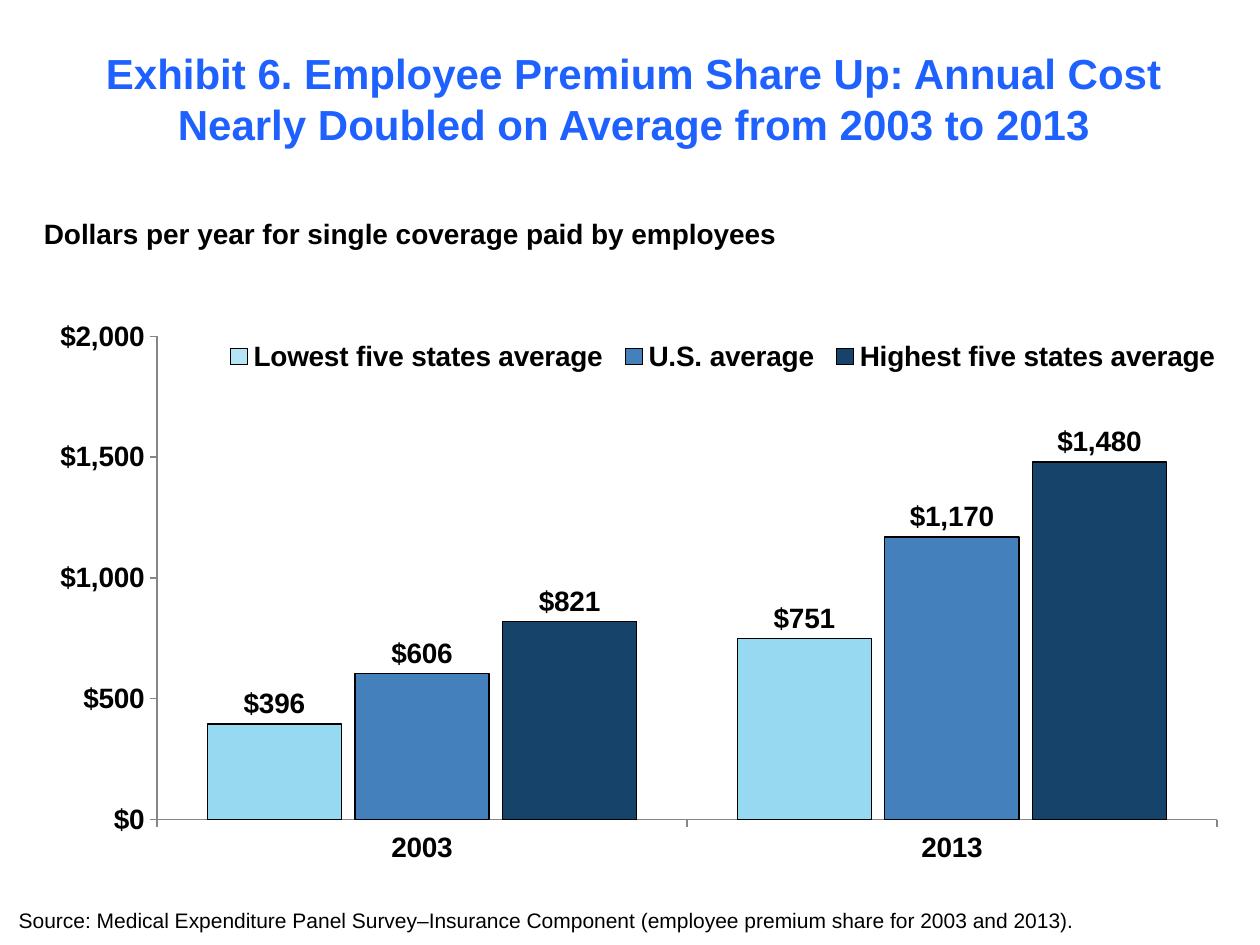
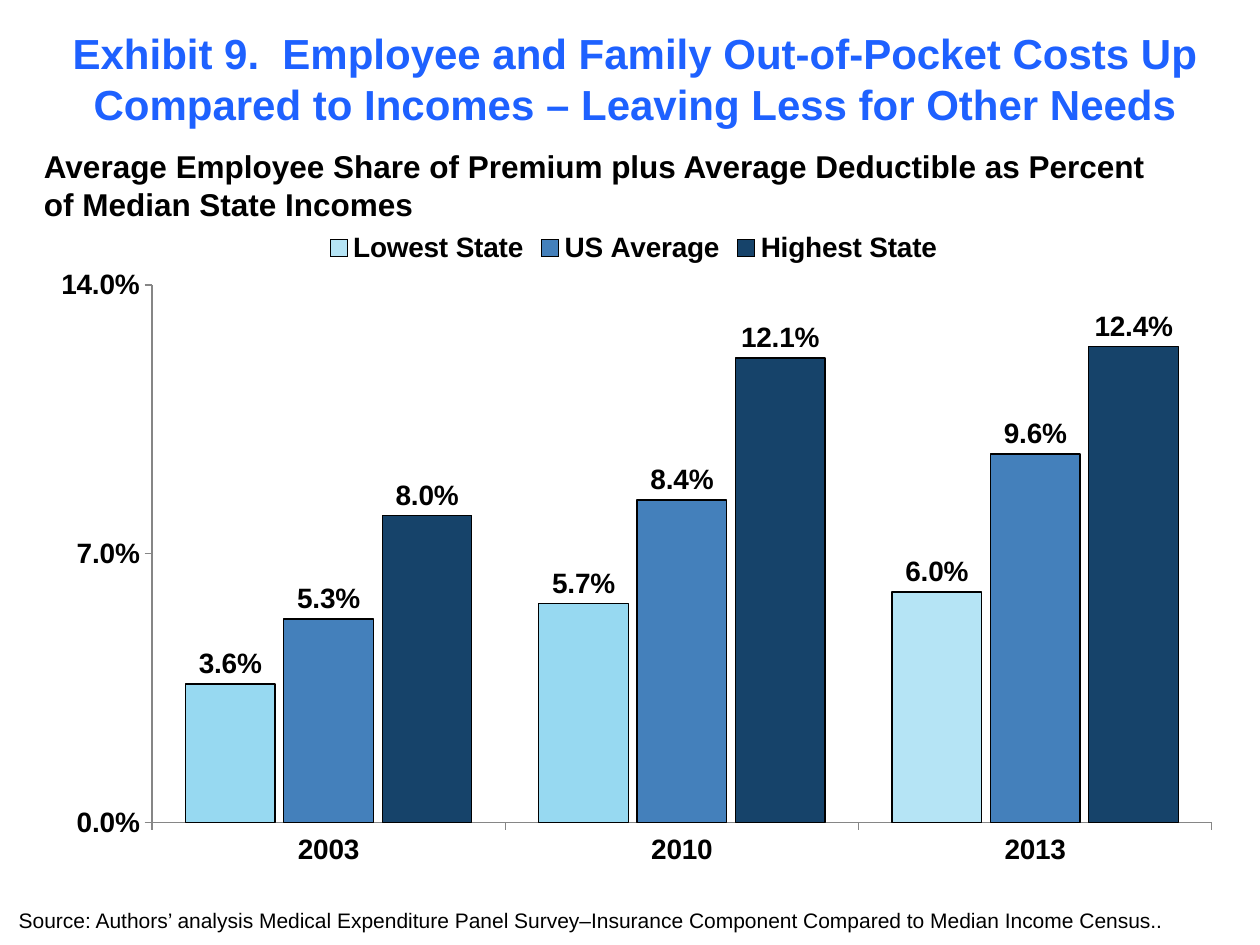
"""Build two exhibit slides on the cost of employee health coverage."""
import pptx
import pptx.chart.data
import pptx.dml.color
import pptx.enum.chart
import pptx.enum.text
import pptx.oxml
import pptx.oxml.ns
import pptx.util

Inches = pptx.util.Inches
Pt = pptx.util.Pt
RGBColor = pptx.dml.color.RGBColor

FONT = "Arial"
BLUE = RGBColor(0x1E, 0x61, 0xFF)
BLACK = RGBColor(0, 0, 0)
GREY = RGBColor(0x86, 0x86, 0x86)
PALE = RGBColor(0xB5, 0xE4, 0xF5)
SKY = RGBColor(0x97, 0xD9, 0xF1)
FILLS = (PALE, RGBColor(0x44, 0x80, 0xBB), RGBColor(0x16, 0x43, 0x6A))


def set_font(font, size, color=BLACK, bold=False):
    font.name = FONT
    font.size = Pt(size)
    font.color.rgb = color
    font.bold = bold


def make_layout(x, y, w, h, inner=False):
    ns = pptx.oxml.ns.nsdecls("c")
    target = '<c:layoutTarget val="inner"/>' if inner else ""
    sizes = "".join(f'<c:{key} val="{val}"/>' for key, val in zip("xywh", (x, y, w, h)))
    return pptx.oxml.parse_xml(
        f'<c:layout {ns}><c:manualLayout>{target}<c:xMode val="edge"/>'
        f'<c:yMode val="edge"/>{sizes}</c:manualLayout></c:layout>')


def drop_layout(part):
    for old in part.findall(pptx.oxml.ns.qn("c:layout")):
        part.remove(old)


class Deck:
    def __init__(self):
        self.prs = pptx.Presentation()
        self.prs.slide_width = Inches(10)
        self.prs.slide_height = Inches(7.5)
        self.slide = None

    def start(self, title, left, top, width):
        self.slide = self.prs.slides.add_slide(self.prs.slide_layouts[5])
        shape = self.slide.shapes.title
        shape.left, shape.top = Inches(left), Inches(top)
        shape.width, shape.height = Inches(width), Inches(0.9)
        frame = shape.text_frame
        frame.text = title
        frame.auto_size = pptx.enum.text.MSO_AUTO_SIZE.NONE
        frame.vertical_anchor = pptx.enum.text.MSO_ANCHOR.TOP
        frame.paragraphs[0].alignment = pptx.enum.text.PP_ALIGN.CENTER
        set_font(frame.paragraphs[0].font, 24, BLUE, True)

    def text(self, words, left, top, width, height, size, bold=False):
        box = self.slide.shapes.add_textbox(
            Inches(left), Inches(top), Inches(width), Inches(height))
        box.text_frame.word_wrap = True
        box.text_frame.text = words
        set_font(box.text_frame.paragraphs[0].font, size, bold=bold)

    def source(self, words):
        self.text("Source: " + words, 0.05, 7.15, 9.78, 0.3, 12)

    def chart(self, left, top, years, rows, form, peak, step, plot, key=None):
        data = pptx.chart.data.CategoryChartData(number_format=form)
        data.categories = years
        for name, vals in rows:
            data.add_series(name, vals)
        chart = self.slide.shapes.add_chart(
            pptx.enum.chart.XL_CHART_TYPE.COLUMN_CLUSTERED,
            Inches(left), Inches(top), Inches(9.56), Inches(5.33), data).chart
        chart.has_title = False
        set_font(chart.font, 16, bold=True)
        self.axes(chart, form, peak, step)
        self.bars(chart.plots[0], form)
        area = chart.element.chart.plotArea
        drop_layout(area)
        area.insert(0, make_layout(*plot, inner=True))
        self.legend(chart, key)

    def axes(self, chart, form, peak, step):
        for axis in (chart.category_axis, chart.value_axis):
            axis.has_major_gridlines = False
            axis.major_tick_mark = pptx.enum.chart.XL_TICK_MARK.OUTSIDE
            axis.format.line.color.rgb = GREY
            axis.format.line.width = Pt(0.75)
            set_font(axis.tick_labels.font, 16, bold=True)
        axis = chart.value_axis
        axis.minimum_scale = 0
        axis.maximum_scale = peak
        axis.major_unit = step
        axis.tick_labels.number_format = form
        axis.tick_labels.number_format_is_linked = False

    def bars(self, plot, form):
        plot.gap_width = 75
        plot.overlap = -10
        plot.vary_by_categories = False
        for bar, fill in zip(plot.series, FILLS):
            self.paint(bar.format, fill)
            bar.invert_if_negative = False
            tags = bar.data_labels
            tags.show_value = True
            tags.position = pptx.enum.chart.XL_LABEL_POSITION.OUTSIDE_END
            tags.number_format = form
            tags.number_format_is_linked = False
            set_font(tags.font, 16, bold=True)
        for spot in range(2):
            self.paint(plot.series[0].points[spot].format, SKY)

    def paint(self, form, fill):
        form.fill.solid()
        form.fill.fore_color.rgb = fill
        form.line.color.rgb = BLACK
        form.line.width = Pt(0.75)

    def legend(self, chart, key):
        chart.has_legend = True
        chart.legend.position = pptx.enum.chart.XL_LEGEND_POSITION.TOP
        chart.legend.include_in_layout = False
        set_font(chart.legend.font, 16, bold=True)
        if key:
            part = chart.element.chart.find(pptx.oxml.ns.qn("c:legend"))
            drop_layout(part)
            part.find(pptx.oxml.ns.qn("c:legendPos")).addnext(make_layout(*key))


def main():
    deck = Deck()

    deck.start("Exhibit 6. Employee Premium Share Up: Annual Cost "
               "Nearly Doubled on Average from 2003 to 2013", 0.23, 0.33, 9.6)
    deck.chart(0.29, 1.71, ("2003", "2013"), (
        ("Lowest five states average", (396, 751)),
        ("U.S. average", (606, 1170)),
        ("Highest five states average", (821, 1480)),
    ), r"\$#,##0", 2000, 500, (0.1, 0.18, 0.88, 0.72), (0.15, 0.18, 0.84, 0.06))
    deck.text("Dollars per year for single coverage paid by employees",
              0.25, 1.67, 7.46, 0.37, 16, True)
    deck.source("Medical Expenditure Panel Survey–Insurance Component "
                "(employee premium share for 2003 and 2013).")

    deck.start("Exhibit 9.  Employee and Family Out-of-Pocket Costs Up "
               "Compared to Incomes – Leaving Less for Other Needs", 0.25, 0.17, 9.58)
    deck.text("Average Employee Share of Premium plus Average Deductible as Percent "
              "of Median State Incomes", 0.25, 1.12, 9.21, 0.71, 18, True)
    deck.chart(0.25, 1.73, ("2003", "2010", "2013"), (
        ("Lowest State", (0.036, 0.057, 0.06)),
        ("US Average", (0.053, 0.084, 0.096)),
        ("Highest State", (0.08, 0.121, 0.124)),
    ), "0.0%", 0.14, 0.07, (0.1, 0.1, 0.88, 0.8))
    deck.source("Authors’ analysis Medical Expenditure Panel Survey–Insurance "
                "Component Compared to Median Income Census..")

    deck.prs.save("out.pptx")


if __name__ == "__main__":
    main()
